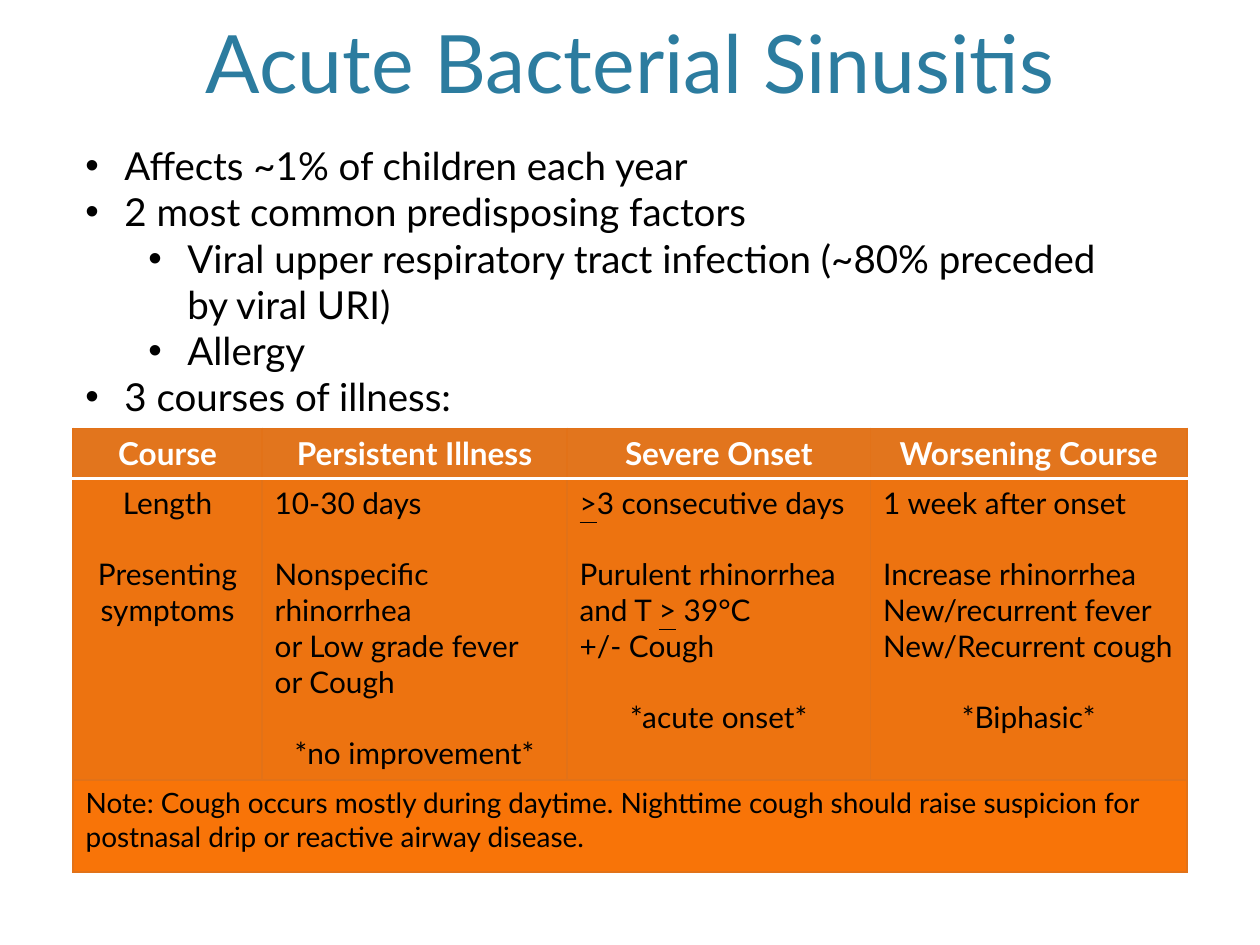
import lxml.etree
import pptx
import pptx.dml.color
import pptx.enum.text
import pptx.oxml.ns
import pptx.util
from pptx.util import Inches

FONT = "Lato"
BLACK, WHITE, TEAL = "000000", "FFFFFF", "2C7C9F"
HEADER_FILL, BODY_FILL, NOTE_FILL = "E2751D", "ED7310", "F87408"
BORDER = "E27218"
LEFT = pptx.enum.text.PP_ALIGN.LEFT
CENTER = pptx.enum.text.PP_ALIGN.CENTER
TOP = pptx.enum.text.MSO_ANCHOR.TOP
MIDDLE = pptx.enum.text.MSO_ANCHOR.MIDDLE
BLANK_LINE = 20.4

BULLETS = [
    (0, "Affects ~1% of children each year"),
    (0, "2 most common predisposing factors"),
    (1, "Viral upper respiratory tract infection (~80% preceded by viral URI)"),
    (1, "Allergy"),
    (0, "3 courses of illness:"),
]
# Each course: heading, length, presenting symptoms, key feature.
# Text between underscores is underlined.
COURSES = [
    ("Persistent Illness", "10-30 days",
     ["Nonspecific rhinorrhea", "or Low grade fever", "or Cough"], "*no improvement*"),
    ("Severe Onset", "_>_3 consecutive days",
     ["Purulent rhinorrhea", "and T _>_ 39°C", "+/- Cough"], "*acute onset*"),
    ("Worsening Course", "1 week after onset",
     ["Increase rhinorrhea", "New/recurrent fever", "New/Recurrent cough"], "*Biphasic*"),
]
NOTE = ("Note: Cough occurs mostly during daytime. Nighttime cough should raise "
        "suspicion for postnasal drip or reactive airway disease.")


def rgb(color):
    return pptx.dml.color.RGBColor.from_string(color)


def add_element(parent, tag, **attributes):
    return lxml.etree.SubElement(parent, pptx.oxml.ns.qn(tag), attributes)


def format_runs(paragraph, size, color, bold=False):
    for run in paragraph.runs:
        run.font.name = FONT
        run.font.size = pptx.util.Pt(size)
        run.font.bold = bold
        run.font.color.rgb = rgb(color)


def next_paragraph(text_frame, index):
    return text_frame.paragraphs[0] if index == 0 else text_frame.add_paragraph()


def set_title(slide, text):
    title = slide.shapes.title
    title.left, title.top = Inches(0.5), Inches(0.17)
    title.width, title.height = Inches(9), Inches(0.75)
    title.text_frame.text = text
    title.text_frame.auto_size = pptx.enum.text.MSO_AUTO_SIZE.NONE
    title.text_frame.vertical_anchor = pptx.enum.text.MSO_ANCHOR.BOTTOM
    paragraph = title.text_frame.paragraphs[0]
    paragraph.alignment = CENTER
    format_runs(paragraph, 46, TEAL)


def add_bullets(slide):
    box = slide.shapes.add_textbox(Inches(0.58), Inches(1.08), Inches(8.5), Inches(2.32))
    text_frame = box.text_frame
    text_frame.word_wrap = True
    for index, (level, text) in enumerate(BULLETS):
        paragraph = next_paragraph(text_frame, index)
        paragraph.text = text
        paragraph.level = level
        format_runs(paragraph, 22, BLACK)
        properties = paragraph._p.get_or_add_pPr()
        properties.set("marL", str(Inches(0.31 + 0.5 * level)))
        properties.set("indent", str(Inches(-0.31)))
        add_element(properties, "a:buFont", typeface="Arial")
        add_element(properties, "a:buChar", char="•")


def set_borders(cell, bottom_color=BORDER, bottom_width=1):
    properties = cell._tc.get_or_add_tcPr()
    for side in "LRTB":
        color, width = (bottom_color, bottom_width) if side == "B" else (BORDER, 1)
        line = add_element(properties, f"a:ln{side}", w=str(pptx.util.Pt(width)))
        add_element(add_element(line, "a:solidFill"), "a:srgbClr", val=color)


def fill_cell(cell, lines, fill, size, color=BLACK, bold=False, anchor=TOP):
    """Write lines given as (text, alignment, space before in points)."""
    cell.fill.solid()
    cell.fill.fore_color.rgb = rgb(fill)
    cell.vertical_anchor = anchor
    for index, (text, alignment, space) in enumerate(lines):
        paragraph = next_paragraph(cell.text_frame, index)
        paragraph.alignment = alignment
        paragraph.space_before = pptx.util.Pt(space)
        for position, part in enumerate(text.split("_")):
            if part:
                run = paragraph.add_run()
                run.text = part
                run.font.underline = position % 2 == 1
        format_runs(paragraph, size, color, bold)


def course_lines(length, symptoms, feature):
    first, *others = symptoms
    return [(length, LEFT, 0), (first, LEFT, BLANK_LINE),
            *[(symptom, LEFT, 0) for symptom in others],
            (feature, CENTER, BLANK_LINE)]


def add_course_table(slide):
    widths, heights = [1.5, 2.42, 2.41, 2.51], [0.4, 2.39, 0.73]
    table = slide.shapes.add_table(
        len(heights), len(widths), Inches(0.58), Inches(3.4),
        Inches(sum(widths)), Inches(sum(heights))).table
    table.horz_banding = False
    for column, width in zip(table.columns, widths):
        column.width = Inches(width)
    for row, height in zip(table.rows, heights):
        row.height = Inches(height)
    for column in range(len(widths)):
        set_borders(table.cell(0, column), WHITE, 2)
        set_borders(table.cell(1, column))
        set_borders(table.cell(2, column))

    labels = [("Length", CENTER, 0), ("Presenting symptoms", CENTER, BLANK_LINE)]
    columns = [("Course", labels)]
    columns += [(heading, course_lines(*details)) for heading, *details in COURSES]
    for column, (heading, lines) in enumerate(columns):
        fill_cell(table.cell(0, column), [(heading, CENTER, 0)], HEADER_FILL, 18,
                  WHITE, bold=True, anchor=MIDDLE)
        fill_cell(table.cell(1, column), lines, BODY_FILL, 17)

    note = table.cell(2, 0)
    note.merge(table.cell(2, len(widths) - 1))
    fill_cell(note, [(NOTE, LEFT, 0)], NOTE_FILL, 16)


def main():
    presentation = pptx.Presentation()
    presentation.slide_width, presentation.slide_height = Inches(10), Inches(7.5)
    slide = presentation.slides.add_slide(presentation.slide_layouts.get_by_name("Title Only"))
    set_title(slide, "Acute Bacterial Sinusitis")
    add_course_table(slide)
    add_bullets(slide)
    presentation.save("out.pptx")


if __name__ == "__main__":
    main()
